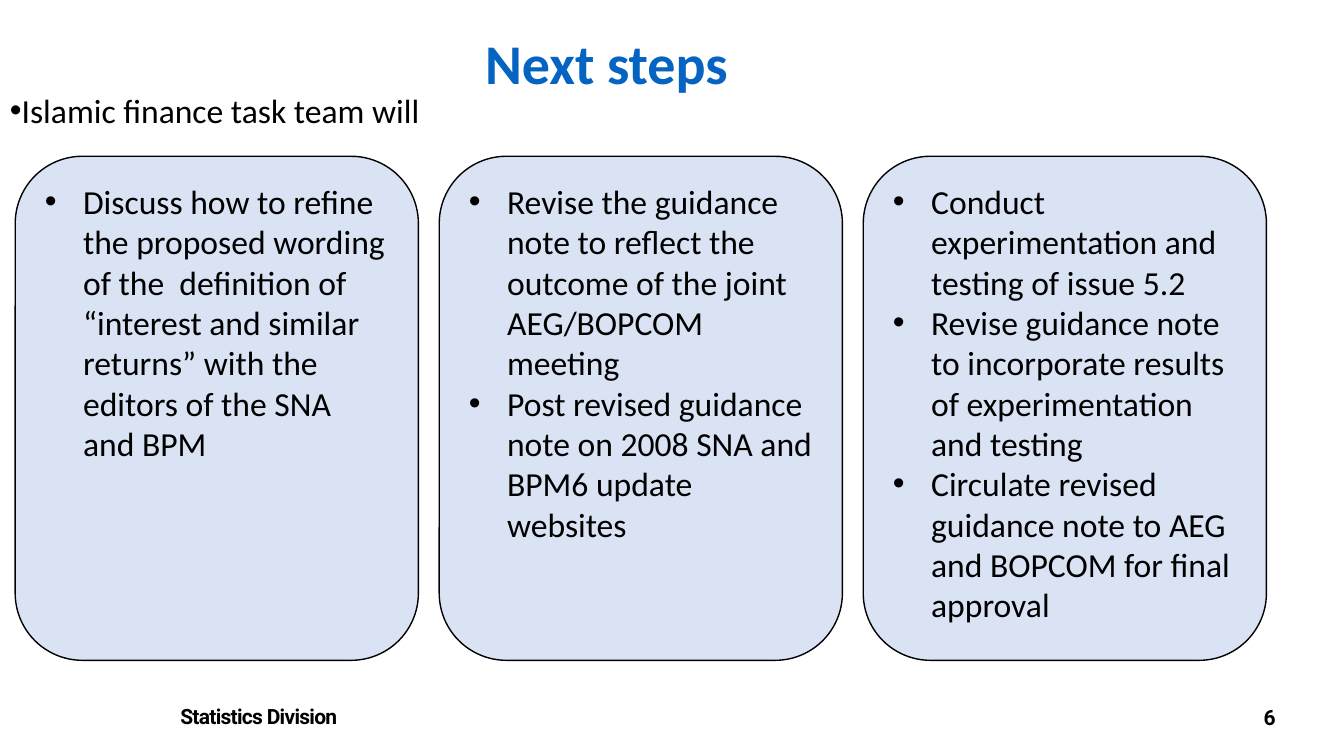
from dataclasses import dataclass

from lxml.etree import SubElement
from pptx import Presentation
from pptx.dml.color import RGBColor as Color
from pptx.enum.shapes import MSO_SHAPE as Preset
from pptx.enum.text import MSO_ANCHOR as Anchor, MSO_AUTO_SIZE as AutoSize, PP_ALIGN as Align
from pptx.oxml.ns import qn
from pptx.util import Inches, Pt


@dataclass(frozen=True)
class Theme:
    ink: Color = Color.from_string("000000")
    paper: Color = Color.from_string("FFFFFF")
    accent: Color = Color.from_string("0563C1")
    card: Color = Color.from_string("DAE3F3")
    body_font: str = "Calibri"
    footer_font: str = "Roboto"
    title_size: int = 40
    body_size: int = 24
    footer_size: int = 15


class Deck:
    """Holds the theme and the current slide; places are percentages of the slide."""

    def __init__(self, theme):
        self.theme = theme
        self.prs = Presentation()
        self.prs.slide_width, self.prs.slide_height = Inches(13.33), Inches(7.5)
        self.slide = self.prs.slides.add_slide(self.prs.slide_layouts[6])

    def area(self, left, top, width, height):
        across, down = self.prs.slide_width / 100, self.prs.slide_height / 100
        return [round(share) for share in (left * across, top * down, width * across, height * down)]

    def fill_frame(self, frame, lines, font, align=Align.LEFT, bullet_margin=None, spacing=None):
        frame.word_wrap = True
        frame.vertical_anchor = Anchor.TOP
        for number, line in enumerate(lines):
            paragraph = frame.paragraphs[0] if number == 0 else frame.add_paragraph()
            paragraph.alignment = align
            if bullet_margin is not None:
                self.bullet(paragraph, bullet_margin)
            run = paragraph.add_run()
            run.text = line
            for name, value in font.items():
                if name == "color":
                    run.font.color.rgb = value
                else:
                    setattr(run.font, name, value)
            if spacing is not None:
                run._r.get_or_add_rPr().set("spc", str(spacing))

    def bullet(self, paragraph, margin):
        properties = paragraph._p.get_or_add_pPr()
        properties.set("marL", str(Inches(margin)))
        properties.set("indent", str(Inches(-0.38)))
        SubElement(properties, qn("a:buFont"), typeface="Arial")
        SubElement(properties, qn("a:buChar"), char="•")

    def body_style(self):
        return {"name": self.theme.body_font, "size": Pt(self.theme.body_size), "color": self.theme.ink}

    def text(self, place, line, font, fill=None, **layout):
        box = self.slide.shapes.add_textbox(*self.area(*place))
        if fill is not None:
            box.fill.solid()
            box.fill.fore_color.rgb = fill
        self.fill_frame(box.text_frame, [line], font, **layout)
        box.text_frame.auto_size = AutoSize.SHAPE_TO_FIT_TEXT

    def title(self, place, line):
        style = {"name": self.theme.body_font, "size": Pt(self.theme.title_size),
                 "bold": True, "color": self.theme.accent}
        self.text(place, line, style, align=Align.CENTER)

    def intro(self, place, line):
        self.text(place, line, self.body_style(), bullet_margin=0.06)

    def footer(self, place, line, align):
        style = {"name": self.theme.footer_font, "size": Pt(self.theme.footer_size),
                 "bold": True, "color": self.theme.ink}
        self.text(place, line, style, fill=self.theme.paper, align=align, spacing=-50)

    def card(self, place, steps):
        card = self.slide.shapes.add_shape(Preset.ROUNDED_RECTANGLE, *self.area(*place))
        card.shadow.inherit = False
        card.fill.solid()
        card.fill.fore_color.rgb = self.theme.card
        card.line.color.rgb = self.theme.ink
        card.line.width = Pt(1)
        self.fill_frame(card.text_frame, steps, self.body_style(), bullet_margin=0.38)


CARD_STEPS = [
    ["Discuss how to refine the proposed wording of the  definition of "
     "“interest and similar returns” with the editors of the SNA and BPM"],
    ["Revise the guidance note to reflect the outcome of the joint AEG/BOPCOM meeting",
     "Post revised guidance note on 2008 SNA and BPM6 update websites"],
    ["Conduct experimentation and testing of issue 5.2",
     "Revise guidance note to incorporate results of experimentation and testing",
     "Circulate revised guidance note to AEG and BOPCOM for final approval"],
]
FIRST_CARD, CARD_PITCH = 1.13, 31.55


def main():
    deck = Deck(Theme())

    # Footer
    deck.footer((12.68, 92.4, 56.4, 4.67), "Statistics Division", Align.LEFT)
    deck.footer((81.4, 92.53, 14.25, 4.67), "6", Align.RIGHT)

    # Heading and lead-in
    deck.title((12.45, 3.07, 65.34, 10.27), "Next steps")
    deck.intro((0, 11.2, 92.5, 6.67), "Islamic finance task team will")

    # Three equal cards
    for column, steps in enumerate(CARD_STEPS):
        deck.card((FIRST_CARD + column * CARD_PITCH, 20.67, 30, 66.67), steps)

    deck.prs.save("out.pptx")


if __name__ == "__main__":
    main()
